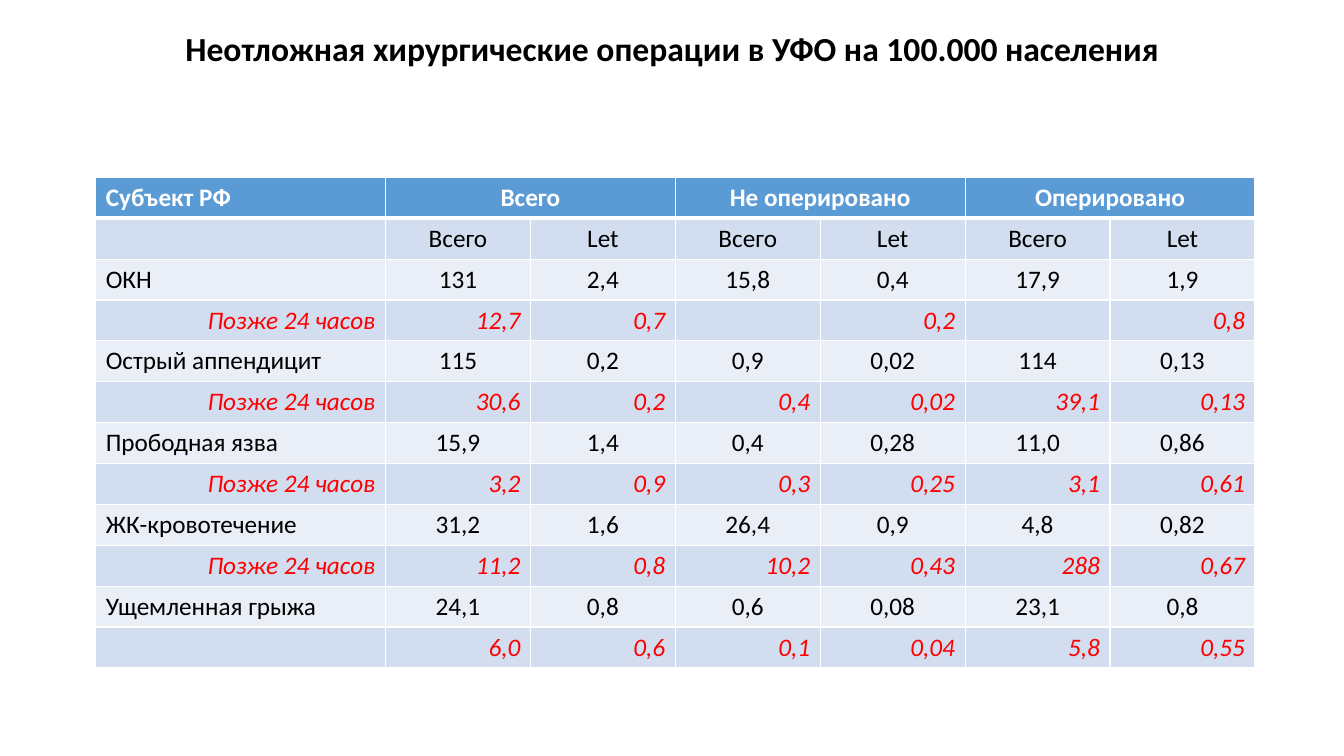
import pptx
import pptx.util
import pptx.dml.color
import pptx.enum.text
import pptx.oxml
import pptx.oxml.ns

THEME = {
    "font": "Calibri", "title_size": 24, "body_size": 18,
    "text": "000000", "late": "FF0000", "white": "FFFFFF",
    "header": "5B9BD5", "band_dark": "D2DEEF", "band_light": "EAEFF7",
    "line": 1, "header_line": 3,
}
ALIGN = pptx.enum.text.PP_ALIGN
MIDDLE = pptx.enum.text.MSO_ANCHOR.MIDDLE
LATE = "Позже 24 часов"

HEADER = ["Субъект РФ", "Всего", "", "Не оперировано", "", "Оперировано", ""]
ROWS = [
    HEADER,
    ["", "Всего", "Let", "Всего", "Let", "Всего", "Let"],
    ["ОКН", "131", "2,4", "15,8", "0,4", "17,9", "1,9"],
    [LATE, "12,7", "0,7", "", "0,2", "", "0,8"],
    ["Острый аппендицит", "115", "0,2", "0,9", "0,02", "114", "0,13"],
    [LATE, "30,6", "0,2", "0,4", "0,02", "39,1", "0,13"],
    ["Прободная язва", "15,9", "1,4", "0,4", "0,28", "11,0", "0,86"],
    [LATE, "3,2", "0,9", "0,3", "0,25", "3,1", "0,61"],
    ["ЖК-кровотечение", "31,2", "1,6", "26,4", "0,9", "4,8", "0,82"],
    [LATE, "11,2", "0,8", "10,2", "0,43", "288", "0,67"],
    ["Ущемленная грыжа", "24,1", "0,8", "0,6", "0,08", "23,1", "0,8"],
    ["", "6,0", "0,6", "0,1", "0,04", "5,8", "0,55"],
]


def write(tf, text, size=THEME["body_size"], color=THEME["text"],
          bold=False, italic=False, align=ALIGN.LEFT, spacing=None):
    p = tf.paragraphs[0]
    p.alignment = align
    if spacing:
        p.line_spacing = spacing
    r = p.add_run()
    r.text = text
    r.font.name = THEME["font"]
    r.font.size = pptx.util.Pt(size)
    r.font.bold = bold
    r.font.italic = italic
    r.font.color.rgb = pptx.dml.color.RGBColor.from_string(color)


def format_cell(cell, fill, top, bottom):
    tcPr = cell._tc.get_or_add_tcPr()
    sides = {"L": THEME["line"], "R": THEME["line"], "T": top, "B": bottom}
    for side, width in sides.items():
        tcPr.append(pptx.oxml.parse_xml(
            f'<a:ln{side} {pptx.oxml.ns.nsdecls("a")} w="{pptx.util.Pt(width)}">'
            f'<a:solidFill><a:srgbClr val="{THEME["white"]}"/></a:solidFill>'
            f'</a:ln{side}>'))
    cell.fill.solid()
    cell.fill.fore_color.rgb = pptx.dml.color.RGBColor.from_string(fill)


# Slide
prs = pptx.Presentation()
prs.slide_width = pptx.util.Inches(13.333)
prs.slide_height = pptx.util.Inches(7.5)
slide = prs.slides.add_slide(prs.slide_layouts[5])

# Title
sp = slide.shapes.title
sp.left, sp.top = pptx.util.Inches(0.92), pptx.util.Inches(0.27)
sp.width, sp.height = pptx.util.Inches(11.5), pptx.util.Inches(0.46)
tf = sp.text_frame
tf.word_wrap = True
tf.auto_size = pptx.enum.text.MSO_AUTO_SIZE.NONE
tf.vertical_anchor = MIDDLE
write(tf, "Неотложная хирургические операции в УФО на 100.000 населения",
      size=THEME["title_size"], bold=True, align=ALIGN.CENTER, spacing=0.9)

# Table grid: the first column is twice as wide as the others
width, height = pptx.util.Inches(11.5), pptx.util.Inches(4.86)
unit = width // (len(HEADER) + 1)
table = slide.shapes.add_table(
    len(ROWS), len(HEADER), pptx.util.Inches(0.95), pptx.util.Inches(1.76),
    width, height).table
for j, column in enumerate(table.columns):
    column.width = unit * 2 if j == 0 else unit
for row in table.rows:
    row.height = height // len(ROWS)

# Header pairs
for j in range(1, len(HEADER), 2):
    table.cell(0, j).merge(table.cell(0, j + 1))

# Cells: odd rows from the third on hold the late cases
for i, values in enumerate(ROWS):
    header, late = i == 0, i > 1 and i % 2 == 1
    fill = THEME["header" if header else "band_dark" if i % 2 else "band_light"]
    color = THEME["white" if header else "late" if late else "text"]
    top = THEME["header_line" if i == 1 else "line"]
    bottom = THEME["header_line" if header else "line"]
    for j, text in enumerate(values):
        cell = table.cell(i, j)
        format_cell(cell, fill, top, bottom)
        if text:
            align = ALIGN.RIGHT if late else ALIGN.CENTER if j else ALIGN.LEFT
            write(cell.text_frame, text, color=color, bold=header,
                  italic=late, align=align)

prs.save("out.pptx")
